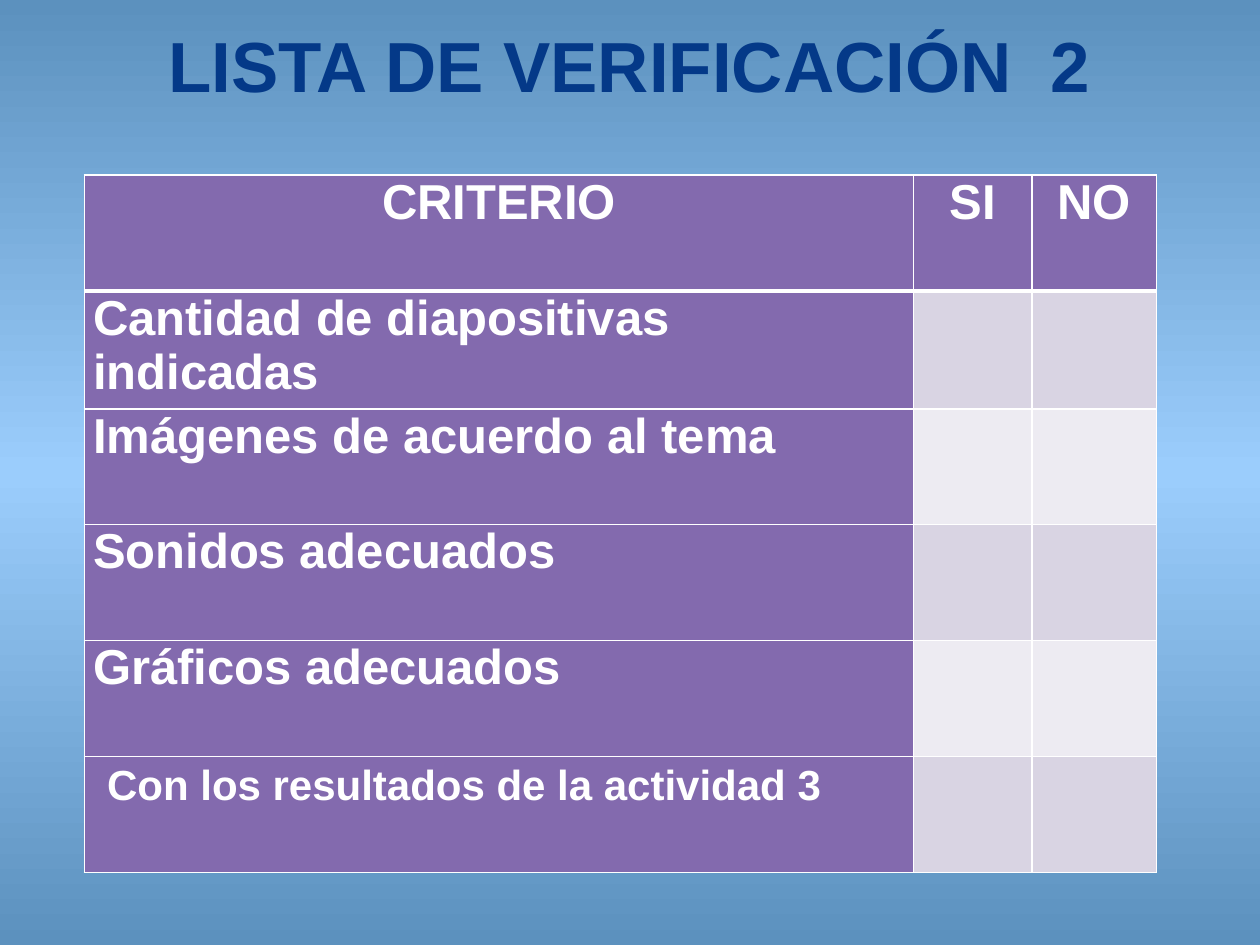
from copy import deepcopy

from lxml.etree import SubElement
from pptx import Presentation
from pptx.dml.color import RGBColor
from pptx.enum.text import MSO_ANCHOR, PP_ALIGN
from pptx.oxml.ns import qn
from pptx.util import Inches, Pt

PURPLE, LILAC, PALE = "836AAE", "D9D4E3", "EDEBF2"
WHITE, NAVY = "FFFFFF", "043988"
EDGE, MIDDLE = "5C91BE", "9BCDFC"


def rgb(value):
    return RGBColor.from_string(value)


def write(tf, text, size=28, color=WHITE, align=PP_ALIGN.LEFT, font="Arial", bold=True):
    p = tf.paragraphs[0]
    p.alignment = align
    r = p.add_run()
    r.text = text
    r.font.name, r.font.size, r.font.bold = font, Pt(size), bold
    r.font.color.rgb = rgb(color)


class SlideBuilder:
    line_color = WHITE
    cell_margin = 0.07

    def __init__(self, prs):
        self.s = prs.slides.add_slide(prs.slide_layouts[6])

    def background(self, colors):
        fill = self.s.background.fill
        fill.gradient()
        fill.gradient_angle = 270
        stops = self.s.element.find(".//" + qn("a:gsLst"))
        while len(stops) < len(colors):
            stops.append(deepcopy(stops[0]))
        for i, (stop, color) in enumerate(zip(fill.gradient_stops, colors)):
            stop.position = i / (len(colors) - 1)
            stop.color.rgb = rgb(color)

    def title(self, text, left, top, width, height):
        sp = self.s.shapes.add_textbox(Inches(left), Inches(top), Inches(width), Inches(height))
        tf = sp.text_frame
        tf.word_wrap = True
        tf.vertical_anchor = MSO_ANCHOR.TOP
        tf.margin_top = tf.margin_bottom = 0
        write(tf, text, size=40.5, color=NAVY, align=PP_ALIGN.CENTER)

    def borders(self, cell, top=1, bottom=1):
        tc_pr = cell._tc.get_or_add_tcPr()
        for i, (side, width) in enumerate([("L", 1), ("R", 1), ("T", top), ("B", bottom)]):
            ln = SubElement(tc_pr, qn("a:ln" + side), w=str(Pt(width)))
            fill = SubElement(ln, qn("a:solidFill"))
            SubElement(fill, qn("a:srgbClr"), val=self.line_color)
            tc_pr.insert(i, ln)

    def cell(self, cell, fill, text="", top=1, bottom=1, indent=0, drop=0, **style):
        cell.fill.solid()
        cell.fill.fore_color.rgb = rgb(fill)
        cell.margin_left = Inches(self.cell_margin + indent)
        cell.margin_right = Inches(self.cell_margin)
        cell.margin_top, cell.margin_bottom = Inches(drop), 0
        self.borders(cell, top, bottom)
        if text:
            write(cell.text_frame, text, **style)

    def checklist(self, header, criteria, left, top, widths, row_height):
        rows = len(criteria) + 1
        table = self.s.shapes.add_table(
            rows, len(header), Inches(left), Inches(top),
            Inches(sum(widths)), Inches(row_height * rows)).table
        for column, width in zip(table.columns, widths):
            column.width = Inches(width)
        for row in table.rows:
            row.height = Inches(row_height)

        # Header row, with a thick rule below it
        for col, text in enumerate(header):
            self.cell(table.cell(0, col), PURPLE, text, bottom=3, align=PP_ALIGN.CENTER)

        # One row per criterion, with banded answer cells
        for row, (text, style) in enumerate(criteria, start=1):
            rule = 3 if row == 1 else 1
            self.cell(table.cell(row, 0), PURPLE, text, top=rule, **style)
            for col in range(1, len(header)):
                self.cell(table.cell(row, col), LILAC if row % 2 else PALE, top=rule)


def main():
    prs = Presentation()
    prs.slide_width, prs.slide_height = Inches(10), Inches(7.5)
    slide = SlideBuilder(prs)
    slide.background([EDGE, MIDDLE, EDGE])
    slide.title("LISTA DE VERIFICACIÓN  2", 0.5, 0.17, 9, 1.18)
    slide.checklist(
        ["CRITERIO", "SI", "NO"],
        [("Cantidad de diapositivas indicadas", {}),
         ("Imágenes de acuerdo al tema", {}),
         ("Sonidos adecuados", {}),
         ("Gráficos adecuados", {}),
         ("Con los resultados de la actividad 3", {"size": 24, "indent": 0.11, "drop": 0.05})],
        left=0.67, top=1.39, widths=[6.58, 0.94, 0.99], row_height=0.92)
    prs.save("out.pptx")


if __name__ == "__main__":
    main()
